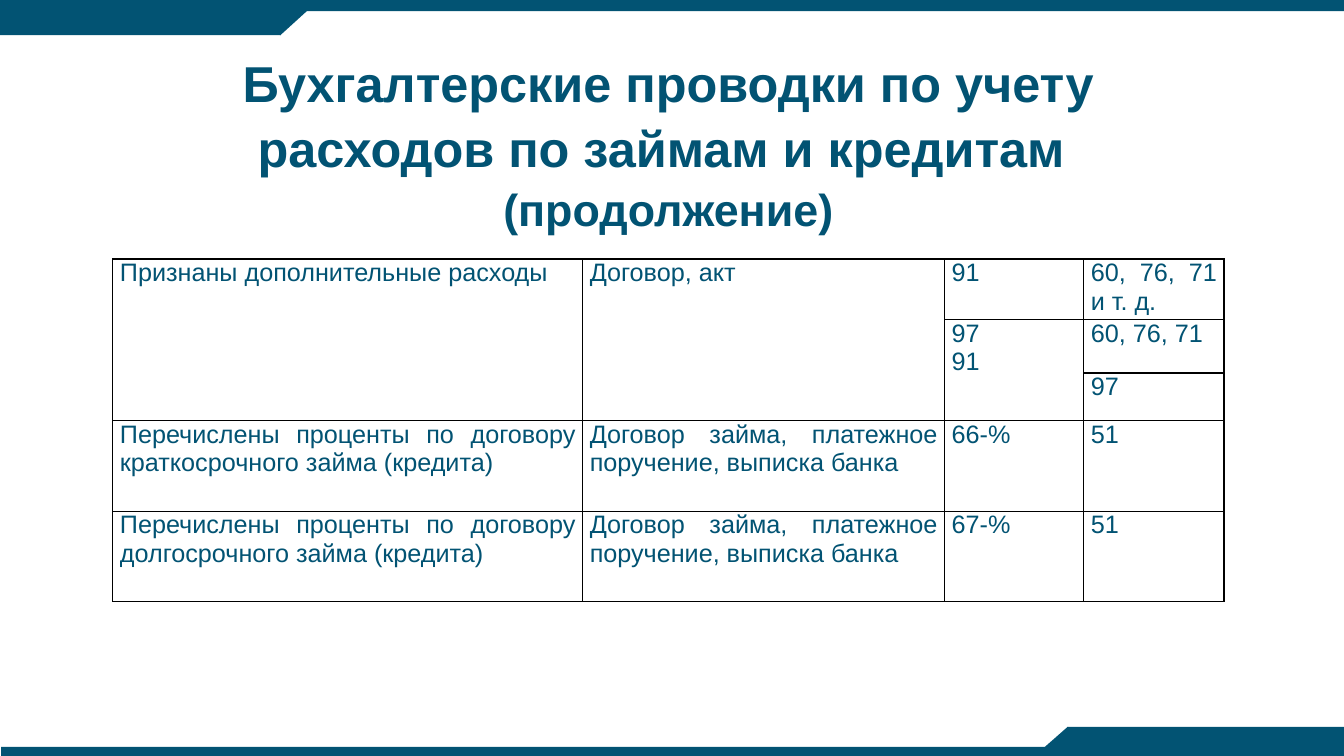
from dataclasses import dataclass

from lxml.etree import SubElement
from pptx import Presentation
from pptx.dml.color import RGBColor
from pptx.enum.shapes import MSO_SHAPE as Preset
from pptx.enum.text import PP_ALIGN as Align
from pptx.oxml.ns import qn
from pptx.slide import Slide
from pptx.table import _Cell as Cell
from pptx.text.text import _Paragraph as Paragraph
from pptx.util import Inches, Length, Pt

TEAL = RGBColor(0x02, 0x53, 0x73)
BLACK = RGBColor(0, 0, 0)
FONT = "Arial"
WIDTH, HEIGHT = Inches(13.33), Inches(7.5)


def across(percent: float) -> Length:
    return Length(round(WIDTH * percent / 100))


def down(percent: float) -> Length:
    return Length(round(HEIGHT * percent / 100))


@dataclass(frozen=True)
class Area:
    """A rectangle in percent of the page's width and height."""
    left: float
    top: float
    width: float
    height: float

    def lengths(self) -> tuple[Length, Length, Length, Length]:
        return across(self.left), down(self.top), across(self.width), down(self.height)


@dataclass(frozen=True)
class Band:
    area: Area
    preset: Preset = Preset.RECTANGLE
    rotation: int = 0


@dataclass(frozen=True)
class Entry:
    """A table cell: its place, its lines of text and how many rows it spans."""
    row: int
    column: int
    text: str
    span: int = 1


BANDS = [
    Band(Area(0, 0, 100, 1.47)),
    Band(Area(0.08, 98.8, 99.92, 1.2)),
    Band(Area(0, 0.67, 20.86, 4)),
    Band(Area(18.38, 0.67, 4.95, 4), Preset.FLOWCHART_MERGE),
    Band(Area(79.44, 96.13, 20.56, 3.87)),
    Band(Area(76.97, 96.13, 4.95, 3.87), Preset.FLOWCHART_MERGE, 180),
]
TITLE_AREA = Area(16.05, 5.73, 67.37, 25.6)
TABLE_AREA = Area(8.4, 34.27, 82.67, 45.33)
COLUMNS = [34.96, 26.93, 10.35, 10.43]
ROWS = [8, 7.07, 6.27, 12, 12]
LOAN_PAPERS = "Договор займа, платежное поручение, выписка банка"
ENTRIES = [
    Entry(0, 0, "Признаны дополнительные расходы", span=3),
    Entry(0, 1, "Договор, акт", span=3),
    Entry(0, 2, "91"),
    Entry(0, 3, "60, 76, 71 и т. д."),
    Entry(1, 2, "97\n91", span=2),
    Entry(1, 3, "60, 76, 71"),
    Entry(2, 3, "97"),
    Entry(3, 0, "Перечислены проценты по договору краткосрочного займа (кредита)"),
    Entry(3, 1, LOAN_PAPERS),
    Entry(3, 2, "66-%"),
    Entry(3, 3, "51"),
    Entry(4, 0, "Перечислены проценты по договору долгосрочного займа (кредита)"),
    Entry(4, 1, LOAN_PAPERS),
    Entry(4, 2, "67-%"),
    Entry(4, 3, "51"),
]


def write(para: Paragraph, text: str, *, size: float, align: Align,
          bold: bool = False, spacing: float = 1.0) -> None:
    para.alignment = align
    para.line_spacing = spacing
    span = para.add_run()
    span.text = text
    span.font.name = FONT
    span.font.size = Pt(size)
    span.font.bold = bold
    span.font.color.rgb = TEAL


def draw_band(page: Slide, band: Band) -> None:
    shape = page.shapes.add_shape(band.preset, *band.area.lengths())
    shape.rotation = band.rotation
    shape.shadow.inherit = False
    shape.fill.solid()
    shape.fill.fore_color.rgb = TEAL
    shape.line.fill.background()


def draw_title(page: Slide) -> None:
    frame = page.shapes.add_textbox(*TITLE_AREA.lengths()).text_frame
    frame.word_wrap = True
    title_format = dict(align=Align.CENTER, bold=True, spacing=1.07)
    write(frame.paragraphs[0],
          "Бухгалтерские проводки по учету расходов по займам и кредитам ",
          size=36, **title_format)
    write(frame.add_paragraph(), "(продолжение)", size=32, **title_format)


def style_cell(cell: Cell) -> None:
    """Set black borders, narrow margins and no fill."""
    properties = cell._tc.get_or_add_tcPr()
    for side in ("a:lnL", "a:lnR", "a:lnT", "a:lnB"):
        line = SubElement(properties, qn(side), w=str(Pt(1)))
        fill = SubElement(line, qn("a:solidFill"))
        SubElement(fill, qn("a:srgbClr"), val=str(BLACK))
    cell.fill.background()
    cell.margin_left = cell.margin_right = Inches(0.07)
    cell.margin_top = cell.margin_bottom = 0


def draw_table(page: Slide) -> None:
    table = page.shapes.add_table(len(ROWS), len(COLUMNS), *TABLE_AREA.lengths()).table
    table.first_row = table.horz_banding = False
    for column, width in zip(table.columns, COLUMNS):
        column.width = across(width)
    for row, height in zip(table.rows, ROWS):
        row.height = down(height)
    for cell in table.iter_cells():
        style_cell(cell)
        cell.text_frame.paragraphs[0].font.size = Pt(18)
    for entry in ENTRIES:
        cell = table.cell(entry.row, entry.column)
        if entry.span > 1:
            cell.merge(table.cell(entry.row + entry.span - 1, entry.column))
        frame = cell.text_frame
        for index, text in enumerate(entry.text.split("\n")):
            para = frame.add_paragraph() if index else frame.paragraphs[0]
            write(para, text, size=18, align=Align.JUSTIFY)


def main() -> None:
    deck = Presentation()
    deck.slide_width, deck.slide_height = WIDTH, HEIGHT
    page = deck.slides.add_slide(deck.slide_layouts[6])
    for band in BANDS:
        draw_band(page, band)
    draw_title(page)
    draw_table(page)
    deck.save("out.pptx")


if __name__ == "__main__":
    main()
